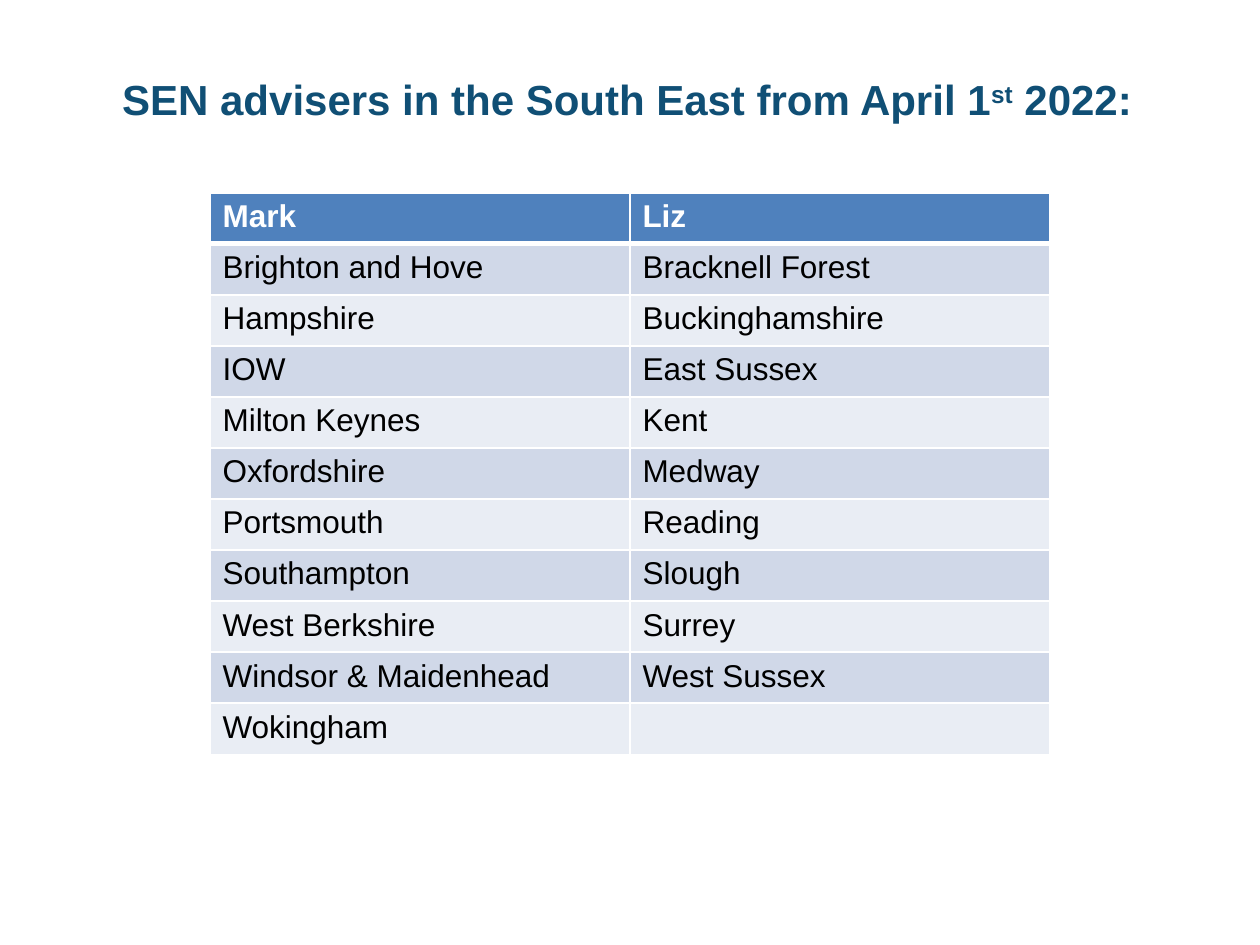
from lxml import etree
from pptx import Presentation
from pptx.dml.color import RGBColor
from pptx.enum.text import MSO_ANCHOR, PP_ALIGN
from pptx.oxml.ns import qn
from pptx.util import Inches, Pt

MIDDLE = MSO_ANCHOR.MIDDLE
LEFT = PP_ALIGN.LEFT

FONT = "Arial"
NAVY, WHITE, BLACK = "104F75", "FFFFFF", "000000"
HEADER_FILL = "4F81BD"
BAND_FILLS = ("D0D8E8", "E9EDF4")

# Content: title runs as (text, is superscript), then one list per adviser
TITLE = [
    ("SEN advisers in the South East from April 1", False),
    ("st", True),
    (" 2022:", False),
]
ADVISERS = {
    "Mark": ["Brighton and Hove", "Hampshire", "IOW", "Milton Keynes",
             "Oxfordshire", "Portsmouth", "Southampton", "West Berkshire",
             "Windsor & Maidenhead", "Wokingham"],
    "Liz": ["Bracknell Forest", "Buckinghamshire", "East Sussex", "Kent",
            "Medway", "Reading", "Slough", "Surrey", "West Sussex", ""],
}

SLIDE_WIDTH, SLIDE_HEIGHT = Inches(10), Inches(7.5)
TABLE_WIDTH = SLIDE_WIDTH * 2 // 3
TABLE_TOP = Inches(1.53)
ROW_HEIGHT = Inches(4.46 / 11)


def color(hex_value):
    return RGBColor.from_string(hex_value)


def format_run(run, size, hex_value, bold):
    run.font.name = FONT
    run.font.size = Pt(size)
    run.font.bold = bold
    run.font.color.rgb = color(hex_value)


def add_borders(cell, bottom_width):
    """Draw white cell borders; they must come before the fill in the XML."""
    properties = cell._tc.get_or_add_tcPr()
    widths = {"a:lnL": 1, "a:lnR": 1, "a:lnT": 1, "a:lnB": bottom_width}
    for position, (tag, width) in enumerate(widths.items()):
        line = etree.Element(qn(tag), w=str(Pt(width)))
        fill = etree.SubElement(line, qn("a:solidFill"))
        etree.SubElement(fill, qn("a:srgbClr"), val=WHITE)
        properties.insert(position, line)


def add_title(slide):
    margin = Inches(0.75)
    box = slide.shapes.add_textbox(
        margin, Inches(0.36), SLIDE_WIDTH - 2 * margin, Inches(0.71))
    frame = box.text_frame
    frame.word_wrap = True
    frame.vertical_anchor = MIDDLE
    frame.margin_left = Inches(0.22)
    frame.margin_top = Inches(0.19)
    paragraph = frame.paragraphs[0]
    paragraph.alignment = LEFT
    for text, superscript in TITLE:
        run = paragraph.add_run()
        run.text = text
        format_run(run, 24, NAVY, True)
        if superscript:
            run._r.get_or_add_rPr().set("baseline", "30000")


def add_adviser_table(slide):
    rows = [tuple(ADVISERS), *zip(*ADVISERS.values())]
    table = slide.shapes.add_table(
        len(rows), len(ADVISERS), (SLIDE_WIDTH - TABLE_WIDTH) // 2, TABLE_TOP,
        TABLE_WIDTH, ROW_HEIGHT * len(rows)).table
    for row_index, row in enumerate(rows):
        table.rows[row_index].height = ROW_HEIGHT
        header = row_index == 0
        fill = HEADER_FILL if header else BAND_FILLS[(row_index - 1) % 2]
        for column_index, text in enumerate(row):
            cell = table.cell(row_index, column_index)
            cell.fill.solid()
            cell.fill.fore_color.rgb = color(fill)
            add_borders(cell, 3 if header else 1)
            cell.text_frame.text = text
            for run in cell.text_frame.paragraphs[0].runs:
                format_run(run, 18, WHITE if header else BLACK, header)


def main():
    presentation = Presentation()
    presentation.slide_width = SLIDE_WIDTH
    presentation.slide_height = SLIDE_HEIGHT
    slide = presentation.slides.add_slide(presentation.slide_layouts[6])
    add_title(slide)
    add_adviser_table(slide)
    presentation.save("out.pptx")


if __name__ == "__main__":
    main()
